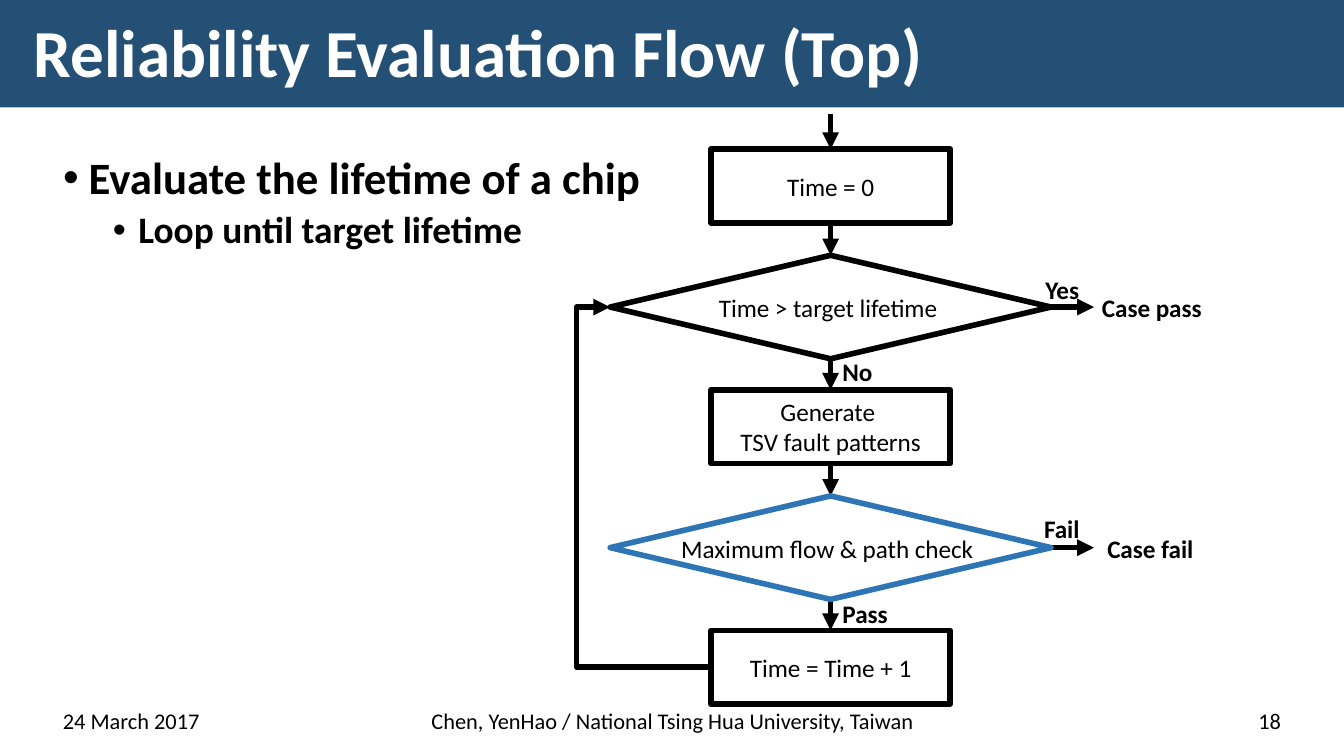
from lxml import etree
from pptx import Presentation
from pptx.dml.color import RGBColor
from pptx.enum.shapes import MSO_CONNECTOR as Connector, MSO_SHAPE as Shape
from pptx.enum.text import MSO_ANCHOR as Anchor, MSO_AUTO_SIZE as AutoSize, PP_ALIGN as Align
from pptx.oxml.ns import qn
from pptx.util import Inches, Pt

COLORS = {"band": "255076", "white": "FFFFFF", "black": "000000", "highlight": "2E75B6"}


def write(paragraph, text, size=13.5, bold=False, color="black", align=Align.LEFT):
    paragraph.text = text
    paragraph.alignment = align
    for run in paragraph.runs:
        run.font.name = "Calibri"
        run.font.size = Pt(size)
        run.font.bold = bold
        run.font.color.rgb = RGBColor.from_string(COLORS[color])


def add_arrow(kind, *ends):
    """Add a black connector; ends are begin x, begin y, end x, end y in inches."""
    connector = slide.shapes.add_connector(kind, *map(Inches, ends))
    connector.line.width = Pt(3)
    connector.line.color.rgb = RGBColor.from_string(COLORS["black"])
    line = connector.element.spPr.find(qn("a:ln"))
    etree.SubElement(line, qn("a:tailEnd"), type="triangle")
    etree.SubElement(connector.element.spPr, qn("a:effectLst"))
    return connector


presentation = Presentation()
presentation.slide_width = Inches(10)
presentation.slide_height = Inches(10) * 9 // 16
slide = presentation.slides.add_slide(presentation.slide_layouts[1])
title, body = slide.placeholders

# Title on its band
band = slide.shapes.add_shape(Shape.RECTANGLE, 0, 0, Inches(10), Inches(0.8))
band.shadow.inherit = False
band.fill.solid()
band.fill.fore_color.rgb = RGBColor.from_string(COLORS["band"])
band.line.fill.background()
title.element.addprevious(band.element)

title.left, title.top, title.width, title.height = map(Inches, (0.15, 0.1, 9.7, 0.63))
title.text_frame.auto_size = AutoSize.NONE
title.text_frame.word_wrap = False
title.text_frame.vertical_anchor = Anchor.MIDDLE
heading = title.text_frame.paragraphs[0]
write(heading, "Reliability Evaluation Flow (Top)", size=36, bold=True, color="white")
heading.line_spacing = 0.9

# Bullet list
body.left, body.top, body.width, body.height = map(Inches, (0.37, 1.11, 9.26, 3.95))
body.text_frame.auto_size = AutoSize.NONE
body.text_frame.add_paragraph()
bullets = [
    ("Evaluate the lifetime of a chip", 24, 7.5, 0.19),
    ("Loop until target lifetime", 20, 3.8, 0.56),
]
for level, (text, size, space, margin) in enumerate(bullets):
    paragraph = body.text_frame.paragraphs[level]
    write(paragraph, text, size=size, bold=True)
    paragraph.level = level
    paragraph.line_spacing = 0.9
    paragraph.space_before = Pt(space)
    properties = paragraph._p.get_or_add_pPr()
    properties.set("marL", str(Inches(margin)))
    properties.set("indent", str(-Inches(0.19)))
    etree.SubElement(properties, qn("a:buFont"), typeface="Arial")
    etree.SubElement(properties, qn("a:buChar"), char="•")

# Flow: process boxes and decision diamonds alternate down one axis
center = 6.18
pitch = 1.79
box_width, box_height = 1.78, 0.55
diamond_width, diamond_height = 3.28, 0.77
box_tops = [1.11 + pitch * i for i in range(3)]
diamond_tops = [1.9 + pitch * i for i in range(2)]
diamond_left, diamond_right = center - diamond_width / 2, center + diamond_width / 2
decision_y = [top + diamond_height / 2 for top in diamond_tops]

stops = [(0.85, box_tops[0])]
for i in range(2):
    stops.append((box_tops[i] + box_height, diamond_tops[i]))
    stops.append((diamond_tops[i] + diamond_height, box_tops[i + 1]))
for start, end in stops:
    add_arrow(Connector.STRAIGHT, center, start, center, end)
for y in decision_y:
    add_arrow(Connector.STRAIGHT, diamond_right, y, 8.14, y)

# Loop back: half a turn makes the lower right corner its start
loop = add_arrow(Connector.ELBOW, diamond_left, decision_y[0],
                 center - box_width / 2, box_tops[2] + box_height / 2)
loop.element.spPr.find(qn("a:xfrm")).set("rot", "10800000")
adjustments = loop.element.spPr.find(qn("a:prstGeom")).find(qn("a:avLst"))
etree.SubElement(adjustments, qn("a:gd"), name="adj1", fmla="val 133300")

box_texts = ["Time = 0", "Generate \nTSV fault patterns", "Time = Time + 1"]
nodes = [(Shape.RECTANGLE, top, box_width, box_height, "black", text)
         for top, text in zip(box_tops, box_texts)]
nodes += [(Shape.DIAMOND, top, diamond_width, diamond_height, color, "")
          for top, color in zip(diamond_tops, ("black", "highlight"))]
for kind, top, width, height, color, text in nodes:
    node = slide.shapes.add_shape(kind, Inches(center - width / 2), Inches(top),
                                  Inches(width), Inches(height))
    node.shadow.inherit = False
    node.fill.background()
    node.line.width = Pt(3)
    node.line.color.rgb = RGBColor.from_string(COLORS[color])
    if text:
        frame = node.text_frame
        frame.vertical_anchor = Anchor.MIDDLE
        frame.margin_left = frame.margin_right = Inches(0.07)
        frame.margin_top = frame.margin_bottom = Inches(0.04)
        write(frame.paragraphs[0], text, align=Align.CENTER)

# Decision and branch labels
labels = [
    ("Time > target lifetime", 5.25, 2.13, 1.85, False),
    ("Maximum flow & path check", 4.97, 3.92, 2.41, False),
    ("Case pass", 8.1, 2.13, 0.95, True),
    ("Case fail", 8.14, 3.92, 0.85, True),
    ("Yes", 7.68, 1.99, 0.46, True),
    ("Fail", 7.67, 3.77, 0.47, True),
    ("No", 6.17, 2.6, 0.43, True),
    ("Pass", 6.17, 4.4, 0.54, True),
]
for text, left, top, width, bold in labels:
    label = slide.shapes.add_textbox(Inches(left), Inches(top), Inches(width), Inches(0.33))
    label.text_frame.word_wrap = False
    label.text_frame.auto_size = AutoSize.SHAPE_TO_FIT_TEXT
    write(label.text_frame.paragraphs[0], text, bold=bold)

# Footer
footers = [
    ("24 March 2017", 0.37, 2.57, Align.LEFT),
    ("Chen, YenHao / National Tsing Hua University, Taiwan", 3.04, 3.93, Align.CENTER),
    ("18", 7.06, 2.57, Align.RIGHT),
]
for text, left, width, align in footers:
    footer = slide.shapes.add_textbox(Inches(left), Inches(5.21), Inches(width), Inches(0.3))
    footer.text_frame.word_wrap = True
    footer.text_frame.vertical_anchor = Anchor.BOTTOM
    write(footer.text_frame.paragraphs[0], text, size=12, align=align)

presentation.save("out.pptx")
